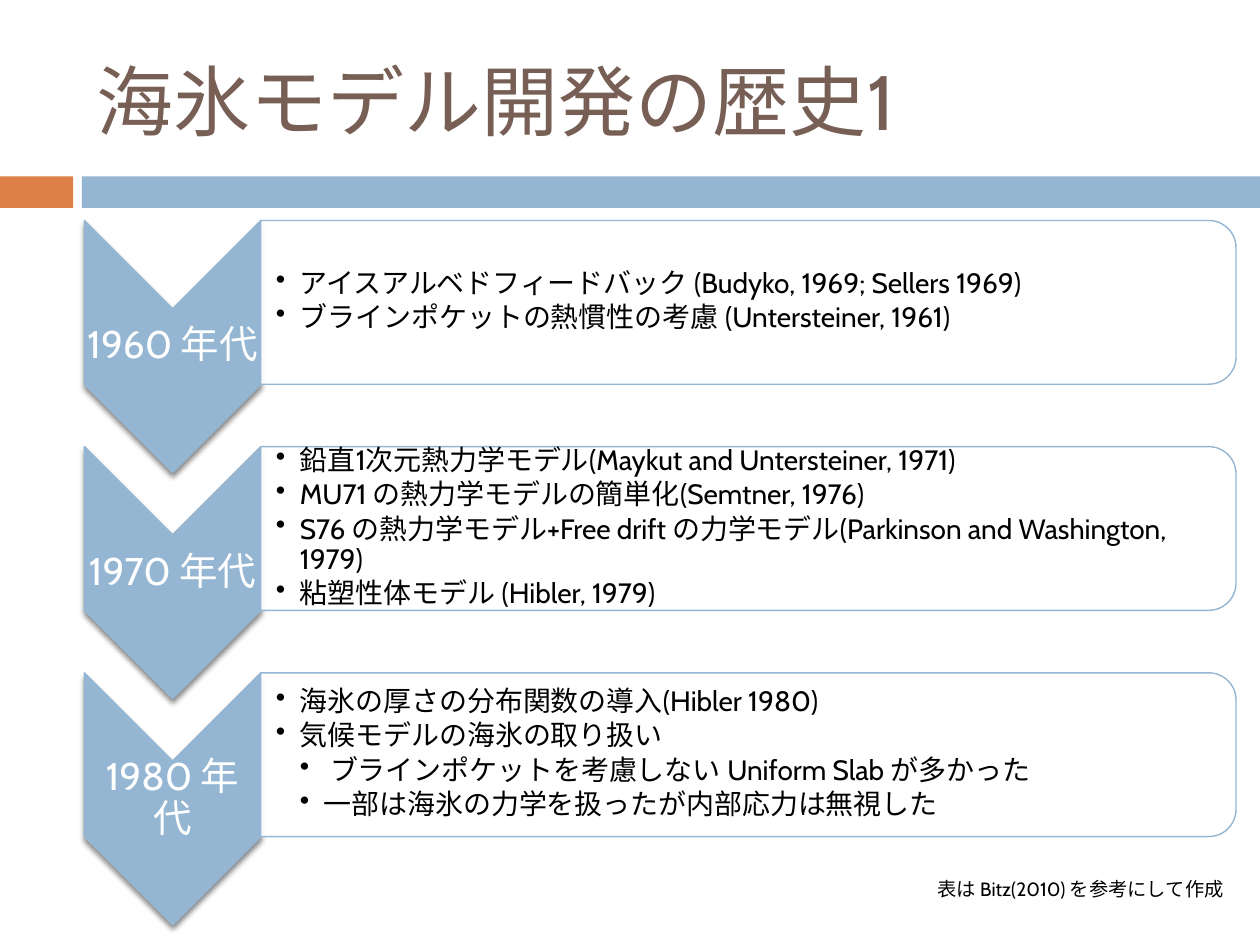
from lxml.etree import SubElement as Sub
from pptx import Presentation
from pptx.dml.color import RGBColor as Rgb
from pptx.enum.shapes import MSO_SHAPE as Kind
from pptx.enum.text import MSO_ANCHOR as Anchor, PP_ALIGN as Align
from pptx.oxml.ns import qn
from pptx.util import Inches, Pt

TITLE = "海氷モデル開発の歴史1"
NOTE = "表は Bitz(2010) を参考にして作成"
ROWS = [
    ("1960 年代", [
        (1, "アイスアルベドフィードバック (Budyko, 1969; Sellers 1969)"),
        (1, "ブラインポケットの熱慣性の考慮 (Untersteiner, 1961)"),
    ]),
    ("1970 年代", [
        (1, "鉛直1次元熱力学モデル(Maykut and Untersteiner, 1971)"),
        (1, "MU71 の熱力学モデルの簡単化(Semtner, 1976)"),
        (1, "S76 の熱力学モデル+Free drift の力学モデル(Parkinson and Washington, 1979)"),
        (1, "粘塑性体モデル (Hibler, 1979)"),
    ]),
    ("1980 年代", [
        (1, "海氷の厚さの分布関数の導入(Hibler 1980)"),
        (1, "気候モデルの海氷の取り扱い"),
        (2, " ブラインポケットを考慮しない Uniform Slab が多かった"),
        (2, "一部は海氷の力学を扱ったが内部応力は無視した"),
    ]),
]
HEX = {"blue": "94B6D2", "orange": "DD8047", "brown": "775F55",
       "white": "FFFFFF", "black": "000000"}
FONT = "Cabin"
WIDE, HIGH = 10, 7.5
LEFT, TOP, STEP = 0.67, 1.75, 1.795
MARK_W, MARK_H = 1.4, 2
CARD_W, CARD_H = 7.74, 1.3
INDENT = 0.19


def tint(name):
    return Rgb.from_string(HEX[name])


def add_form(slide, kind, box, fill, edge=None, turn=0):
    left, top, wide, high = box
    if turn:
        left, top = left + (wide - high) / 2, top + (high - wide) / 2
        wide, high = high, wide
    form = slide.shapes.add_shape(kind, *map(Inches, (left, top, wide, high)))
    form.rotation = turn
    form.shadow.inherit = False
    form.fill.solid()
    form.fill.fore_color.rgb = tint(fill)
    if edge:
        form.line.color.rgb = tint(edge)
        form.line.width = Pt(0.79)
    else:
        form.line.fill.background()
    return form


def fade(node, share):
    Sub(node, qn("a:alpha"), val=str(share * 1000))


def cast(form):
    effect = form._element.spPr.find(qn("a:effectLst"))
    shade = Sub(effect, qn("a:outerShdw"), blurRad=str(Pt(3)),
                dist=str(Pt(2.4)), dir="5400000", rotWithShape="0")
    fade(Sub(shade, qn("a:srgbClr"), val=HEX["black"]), 45)


def add_text(slide, box, lines, size, color, inset=(0.1, 0.05, 0.1, 0.05),
             anchor=Anchor.MIDDLE):
    frame = slide.shapes.add_textbox(*map(Inches, box)).text_frame
    frame.word_wrap = True
    frame.vertical_anchor = anchor
    (frame.margin_left, frame.margin_top,
     frame.margin_right, frame.margin_bottom) = map(Inches, inset)
    frame.text = "\n".join(lines)
    for para in frame.paragraphs:
        for run in para.runs:
            run.font.name = FONT
            run.font.size = Pt(size)
            run.font.color.rgb = tint(color)
    return frame.paragraphs


def pack(para, after):
    para.line_spacing = 0.9
    para.space_after = Pt(after)


def add_mark(slide, top, label):
    cast(add_form(slide, Kind.CHEVRON, (LEFT, top, MARK_W, MARK_H),
                  "blue", "blue", 90))
    box = (LEFT, top + MARK_W / 2, MARK_W, MARK_H - MARK_W)
    para = add_text(slide, box, [label], 22, "white", (0.02,) * 4)[0]
    para.alignment = Align.CENTER
    pack(para, 7.7)


def add_card(slide, top, items):
    left = LEFT + MARK_W
    card = add_form(slide, Kind.ROUND_2_SAME_RECTANGLE,
                    (left, top, CARD_W, CARD_H), "white", "blue", 90)
    fade(card._element.spPr.find(qn("a:solidFill"))[0], 90)
    box = (left, top + 0.06, CARD_W - 0.06, CARD_H - 0.13)
    paras = add_text(slide, box, [text for _, text in items], 16, "black",
                     (0.12, 0.01, 0.01, 0.01))
    for para, (level, _) in zip(paras, items):
        para.level = level
        pack(para, 2.4)
        props = para._p.get_or_add_pPr()
        props.set("marL", str(Inches(INDENT * level)))
        props.set("indent", str(Inches(-INDENT)))
        Sub(props, qn("a:buChar"), char="•")


def main():
    deck = Presentation()
    deck.slide_width, deck.slide_height = Inches(WIDE), Inches(HIGH)
    slide = deck.slides.add_slide(deck.slide_layouts[6])
    for left, wide, color in ((0, 0.58, "orange"), (0.65, WIDE - 0.65, "blue")):
        add_form(slide, Kind.RECTANGLE, (left, 1.4, wide, 0.25), color)
    add_text(slide, (LEFT, 0.25, 8.92, 1.08), [TITLE], 44, "brown")
    for row, (label, items) in enumerate(ROWS):
        top = TOP + row * STEP
        add_mark(slide, top, label)
        add_card(slide, top, items)
    add_text(slide, (7.34, 6.91, 2.66, 0.29), [NOTE], 11, "black",
             anchor=Anchor.TOP)
    deck.save("out.pptx")


if __name__ == "__main__":
    main()
